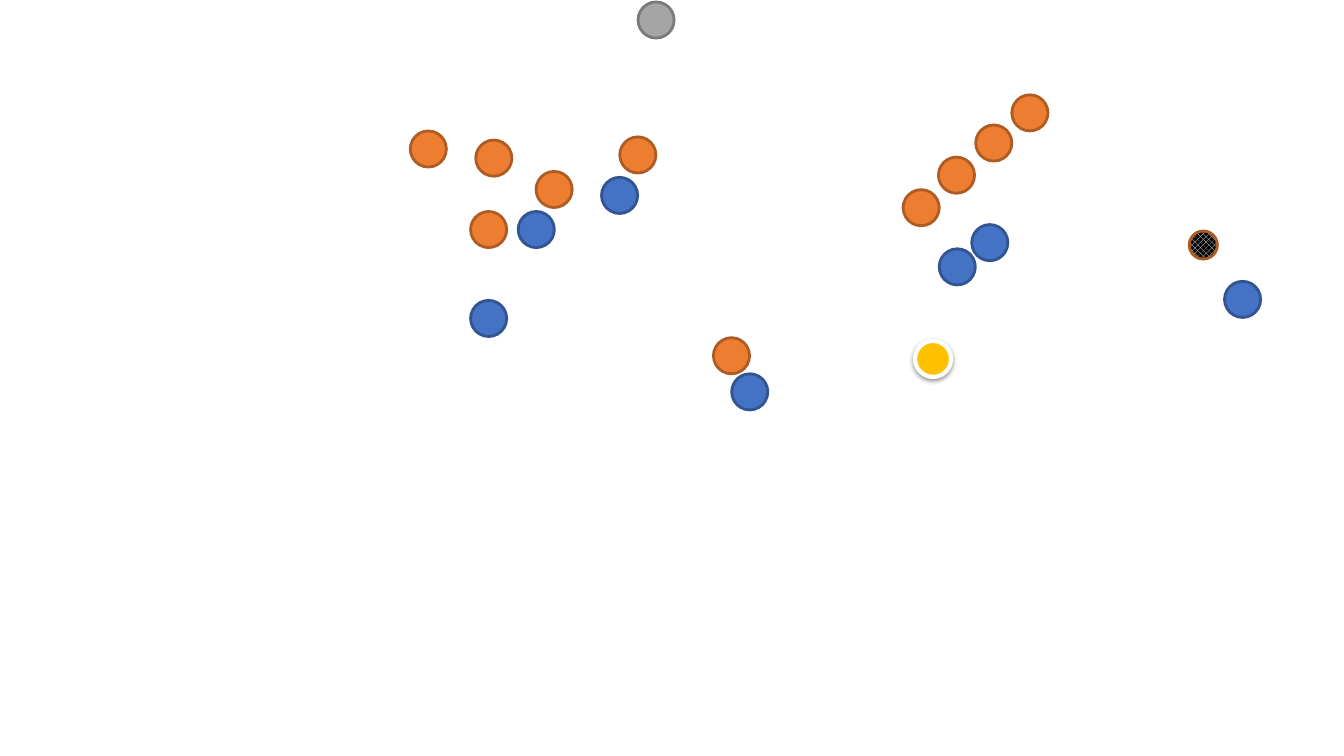
from dataclasses import dataclass

from lxml import etree
from pptx import Presentation
from pptx.dml.color import RGBColor
from pptx.enum import dml, shapes
from pptx.oxml import ns
from pptx.util import Cm, Pt


@dataclass(frozen=True)
class Theme:
    attack: tuple = ("ED7D31", "AF5C24", 2)
    defence: tuple = ("4472C4", "325491", 2)
    referee: tuple = ("A5A5A5", "7A7A7A", 2)
    keeper: tuple = ("FFC000", "FFFFFF", 3)
    ball: tuple = ("000000", "AF5C24", 2)
    ball_pattern: str = "FFFFFF"
    shadow: str = "000000"


THEME = Theme()
PLAYER_SIZE = 0.91
BALL_SIZE = 0.71

ATTACKERS = [
    (25.5, 2.39), (24.59, 3.15), (23.65, 3.96), (22.76, 4.78), (15.62, 3.45),
    (13.51, 4.32), (11.99, 3.53), (17.98, 8.51), (11.86, 5.33), (10.34, 3.3),
]
DEFENDERS = [
    (24.49, 5.66), (13.06, 5.33), (23.67, 6.27), (15.16, 4.47),
    (11.86, 7.57), (18.44, 9.42), (30.86, 7.09),
]
REFEREE = (16.08, 0.05)
KEEPER = (23.06, 8.59)
BALL = (29.97, 5.82)


def set_attributes(target, values):
    for name, value in values.items():
        setattr(target, name, value)


def add_marker(slide, position, style, size=PLAYER_SIZE):
    left, top = position
    fill, outline, width = style
    shape = slide.shapes.add_shape(
        shapes.MSO_SHAPE.OVAL, Cm(left), Cm(top), Cm(size), Cm(size))
    shape.shadow.inherit = False
    shape.fill.solid()
    shape.fill.fore_color.rgb = RGBColor.from_string(fill)
    shape.line.color.rgb = RGBColor.from_string(outline)
    shape.line.width = Pt(width)
    return shape


def add_shadow(shape):
    effects = shape.element.spPr.find(ns.qn("a:effectLst"))
    shadow = etree.SubElement(
        effects, ns.qn("a:outerShdw"), blurRad=str(Pt(3.1)), dist=str(Pt(1.6)),
        dir="5400000", rotWithShape="0")
    color = etree.SubElement(shadow, ns.qn("a:srgbClr"), val=THEME.shadow)
    etree.SubElement(color, ns.qn("a:alpha"), val="38000")


def add_ball(slide):
    ball = add_marker(slide, BALL, THEME.ball, BALL_SIZE)
    ball.fill.patterned()
    ball.fill.pattern = dml.MSO_PATTERN.OUTLINED_DIAMOND
    ball.fill.fore_color.rgb = RGBColor.from_string(THEME.ball_pattern)
    ball.fill.back_color.rgb = RGBColor.from_string(THEME.ball[0])


def main():
    presentation = Presentation()
    set_attributes(presentation, {"slide_width": Cm(33.87), "slide_height": Cm(19.05)})
    slide = presentation.slides.add_slide(presentation.slide_layouts[6])
    for positions, style in (
        (ATTACKERS, THEME.attack),
        ([REFEREE], THEME.referee),
        (DEFENDERS, THEME.defence),
    ):
        for position in positions:
            add_marker(slide, position, style)
    add_shadow(add_marker(slide, KEEPER, THEME.keeper))
    add_ball(slide)
    presentation.save("out.pptx")


if __name__ == "__main__":
    main()
